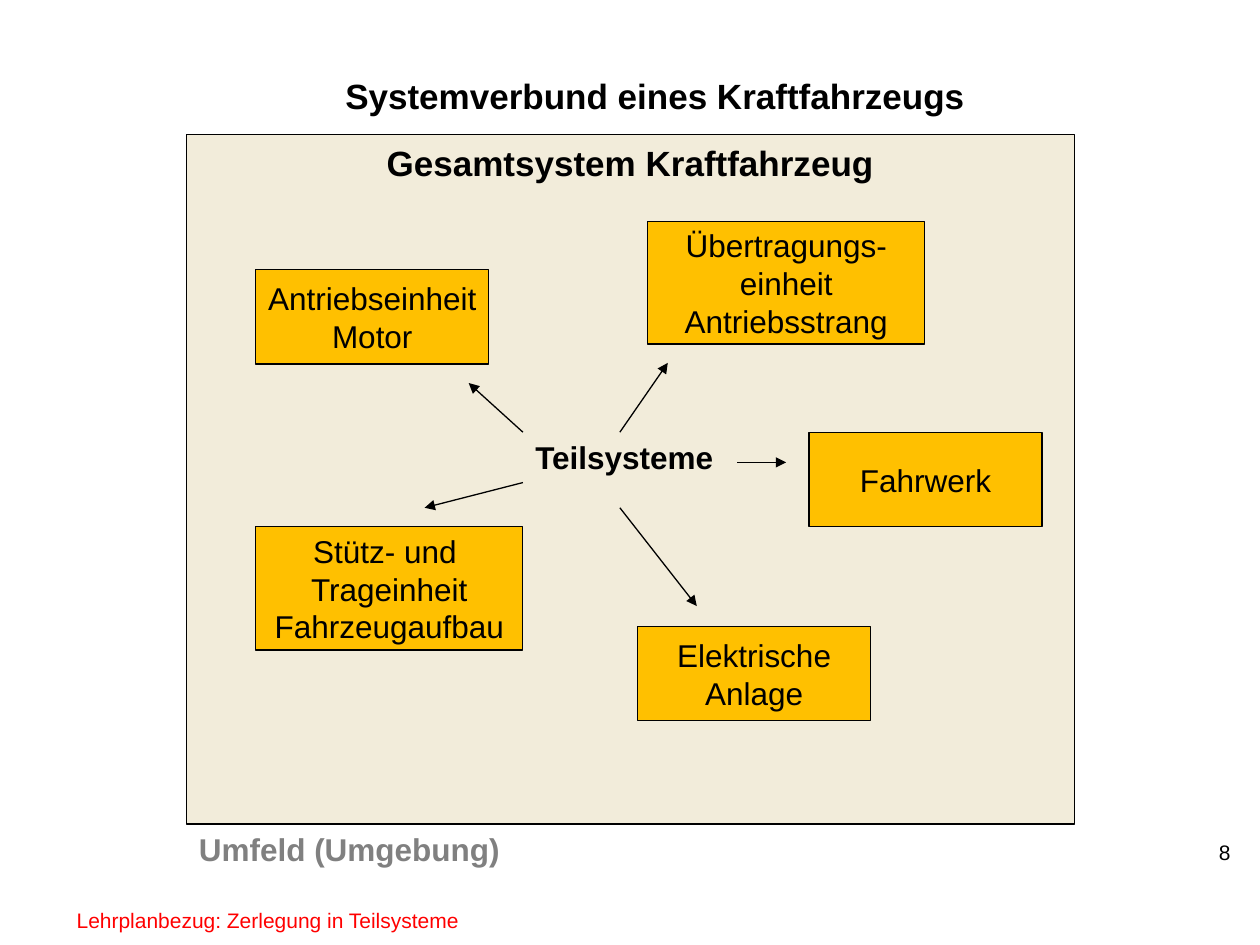
import pptx
import pptx.dml.color
import pptx.enum.shapes
import pptx.enum.text
import pptx.oxml
import pptx.oxml.ns
import pptx.util

Inches = pptx.util.Inches
Pt = pptx.util.Pt
RGBColor = pptx.dml.color.RGBColor
ALIGN = pptx.enum.text.PP_ALIGN
ANCHOR = pptx.enum.text.MSO_ANCHOR

FONT = "Arial"
BLACK = RGBColor(0, 0, 0)
GRAY = RGBColor(0x80, 0x80, 0x80)
RED = RGBColor(0xFF, 0, 0)
CREAM = RGBColor(0xF2, 0xEC, 0xDA)
AMBER = RGBColor(0xFF, 0xC0, 0)

TITLE = ("Systemverbund eines Kraftfahrzeugs", (2.64, 0.32, 5.51, 0.87))
SYSTEM_FRAME = (1.48, 1.07, 7.05, 5.47)
LABELS = [
    ("Umfeld (Umgebung)", (1.48, 6.54, 2.95, 0.4), 18, True, GRAY),
    ("Gesamtsystem Kraftfahrzeug", (2.97, 1.07, 4.21, 0.43), 20, True, BLACK),
    ("Teilsysteme", (4.15, 3.43, 1.69, 0.4), 18, True, BLACK),
    ("Lehrplanbezug: Zerlegung in Teilsysteme", (0.51, 7.15, 8.35, 0.3), 12, False, RED),
]
PAGE_NUMBER = ("8", (9.48, 6.5, 0.48, 0.52))
SUBSYSTEMS = [
    (["Antriebseinheit", "Motor"], (2.03, 2.14, 1.85, 0.75)),
    (["Stütz- und ", "Trageinheit", "Fahrzeugaufbau"], (2.03, 4.18, 2.12, 0.98)),
    (["Fahrwerk"], (6.42, 3.43, 1.85, 0.75)),
    (["Übertragungs-", "einheit", "Antriebsstrang"], (5.14, 1.76, 2.2, 0.97)),
    (["Elektrische", "Anlage"], (5.06, 4.97, 1.85, 0.75)),
]
ARROWS = [
    ((4.92, 3.43), (5.3, 2.88)),
    ((4.15, 3.43), (3.72, 3.04)),
    ((4.15, 3.83), (3.37, 4.03)),
    ((4.92, 4.03), (5.53, 4.81)),
    ((5.85, 3.67), (6.24, 3.67)),
]


def inches(values):
    return [Inches(value) for value in values]


def write(shape, lines, size, bold=False, color=BLACK, align=ALIGN.LEFT,
          anchor=ANCHOR.TOP, wrap=True):
    frame = shape.text_frame
    frame.word_wrap = wrap
    frame.vertical_anchor = anchor
    for index, line in enumerate(lines):
        paragraph = frame.add_paragraph() if index else frame.paragraphs[0]
        paragraph.alignment = align
        run = paragraph.add_run()
        run.text = line
        run.font.name = FONT
        run.font.size = Pt(size)
        run.font.bold = bold
        run.font.color.rgb = color


def add_box(slide, bounds, fill):
    box = slide.shapes.add_shape(
        pptx.enum.shapes.MSO_SHAPE.RECTANGLE, *inches(bounds))
    box.shadow.inherit = False
    box.fill.solid()
    box.fill.fore_color.rgb = fill
    box.line.color.rgb = BLACK
    box.line.width = Pt(0.75)
    return box


def add_arrow(slide, start, end):
    arrow = slide.shapes.add_connector(
        pptx.enum.shapes.MSO_CONNECTOR.STRAIGHT, *inches(start + end))
    arrow.line.color.rgb = BLACK
    arrow.line.width = Pt(0.75)
    head = pptx.oxml.parse_xml(
        f'<a:tailEnd {pptx.oxml.ns.nsdecls("a")} type="triangle"/>')
    arrow.line._get_or_add_ln().append(head)
    effects = pptx.oxml.parse_xml(f'<a:effectLst {pptx.oxml.ns.nsdecls("a")}/>')
    arrow._element.spPr.append(effects)


def main():
    presentation = pptx.Presentation()
    presentation.slide_width = Inches(10)
    presentation.slide_height = Inches(7.5)
    slide = presentation.slides.add_slide(presentation.slide_layouts[5])

    text, bounds = TITLE
    title = slide.shapes.title
    title.left, title.top, title.width, title.height = inches(bounds)
    write(title, [text], 20, bold=True, anchor=ANCHOR.MIDDLE)

    add_box(slide, SYSTEM_FRAME, CREAM)
    for text, bounds, size, bold, color in LABELS:
        label = slide.shapes.add_textbox(*inches(bounds))
        write(label, [text], size, bold, color)

    text, bounds = PAGE_NUMBER
    page_number = slide.shapes.add_textbox(*inches(bounds))
    write(page_number, [text], 12, align=ALIGN.CENTER, anchor=ANCHOR.MIDDLE)

    for lines, bounds in SUBSYSTEMS:
        box = add_box(slide, bounds, AMBER)
        write(box, lines, 18, align=ALIGN.CENTER, anchor=ANCHOR.MIDDLE, wrap=False)

    for start, end in ARROWS:
        add_arrow(slide, start, end)

    presentation.save("out.pptx")


if __name__ == "__main__":
    main()
